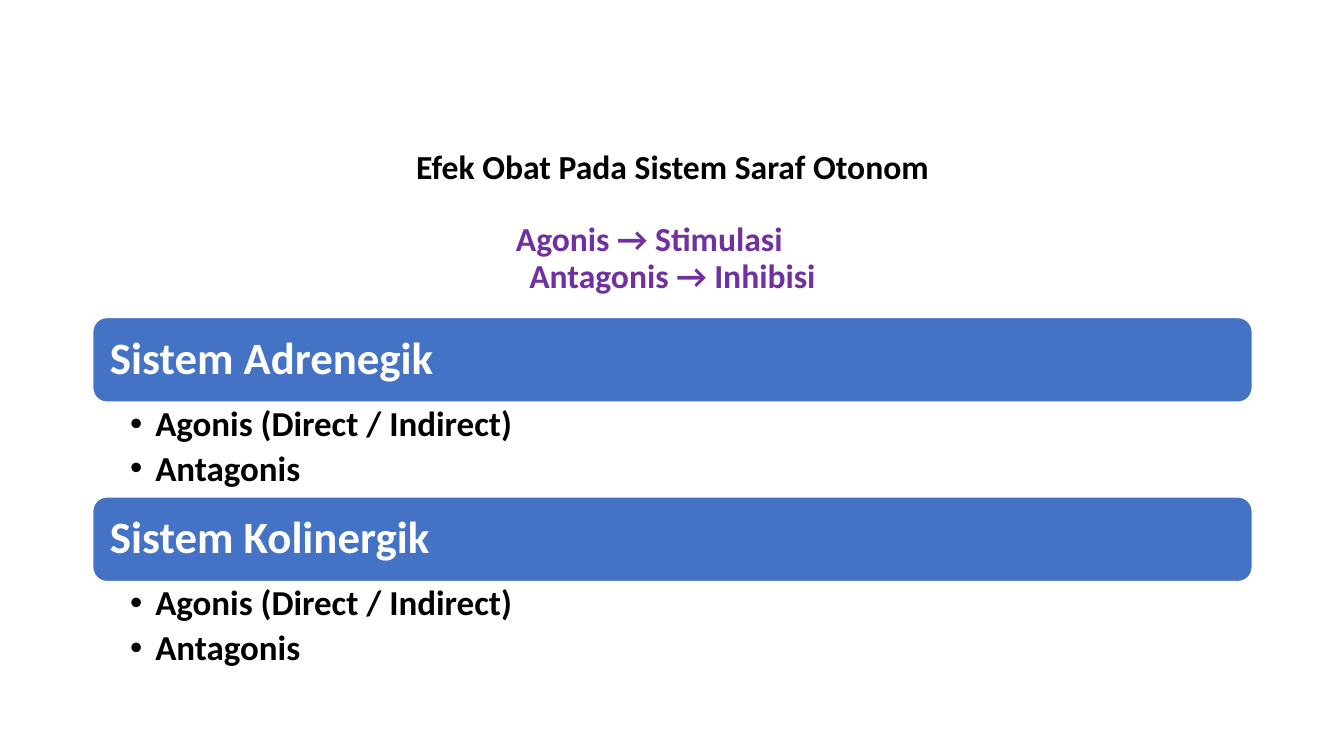
from dataclasses import dataclass

from lxml import etree
from pptx import Presentation
from pptx.dml.color import RGBColor
from pptx.enum.shapes import MSO_SHAPE
from pptx.enum.text import MSO_ANCHOR, MSO_AUTO_SIZE, PP_ALIGN
from pptx.oxml.ns import qn
from pptx.util import Inches, Pt

ROUNDED = MSO_SHAPE.ROUNDED_RECTANGLE
TOP, MIDDLE = MSO_ANCHOR.TOP, MSO_ANCHOR.MIDDLE
LEFT, CENTER = PP_ALIGN.LEFT, PP_ALIGN.CENTER
NO_FIT = MSO_AUTO_SIZE.NONE

BLACK = RGBColor(0x00, 0x00, 0x00)
WHITE = RGBColor(0xFF, 0xFF, 0xFF)
PURPLE = RGBColor(0x70, 0x30, 0xA0)
BLUE = RGBColor(0x44, 0x72, 0xC4)

MARGIN, WIDTH = 0.92, 11.5
FIRST_TOP, BAR_HEIGHT, LIST_HEIGHT = 3.15, 0.84, 0.94
AGONIST_SHIFT = 0.46


@dataclass
class DrugSystem:
    name: str
    effects: tuple[str, ...]


@dataclass
class TitleLine:
    text: str
    color: RGBColor
    indent: float = AGONIST_SHIFT
    before: float = 0


EFFECTS = ("Agonis (Direct / Indirect)", "Antagonis")
SYSTEMS = (
    DrugSystem("Sistem Adrenegik", EFFECTS),
    DrugSystem("Sistem Kolinergik", EFFECTS),
)
TITLE_LINES = (
    TitleLine("Efek Obat Pada Sistem Saraf Otonom", BLACK),
    TitleLine("Agonis → Stimulasi", PURPLE, indent=0, before=26),
    TitleLine("Antagonis → Inhibisi", PURPLE),
)


def place(sp, top: float, height: float) -> None:
    sp.left, sp.top = Inches(MARGIN), Inches(top)
    sp.width, sp.height = Inches(WIDTH), Inches(height)


def set_frame(tf, anchor, left: float, top: float, right: float, bottom: float) -> None:
    tf.word_wrap = True
    tf.auto_size = NO_FIT
    tf.vertical_anchor = anchor
    tf.margin_left, tf.margin_right = Inches(left), Inches(right)
    tf.margin_top, tf.margin_bottom = Inches(top), Inches(bottom)


def add_text(tf, text: str, *, size: float, color: RGBColor, align=LEFT, first: bool = True,
             before: float = 0, after: float = 0, indent: float = 0, bullet: str = "") -> None:
    p = tf.paragraphs[0] if first else tf.add_paragraph()
    pPr = p._p.get_or_add_pPr()
    pPr.set("marL", str(Inches(indent)))
    pPr.set("indent", str(-Inches(indent) if bullet else 0))
    if bullet:
        etree.SubElement(pPr, qn("a:buFont"), typeface="Arial")
        etree.SubElement(pPr, qn("a:buChar"), char=bullet)
    p.alignment = align
    p.line_spacing = 0.9
    p.space_before, p.space_after = Pt(before), Pt(after)
    r = p.add_run()
    r.text = text
    r.font.name, r.font.size, r.font.bold = "Calibri", Pt(size), True
    r.font.color.rgb = color


def add_title(sp) -> None:
    place(sp, 1.51, 1.4)
    tf = sp.text_frame
    set_frame(tf, MIDDLE, 0.1, 0.05, 0.1 + AGONIST_SHIFT, 0.05)
    for i, line in enumerate(TITLE_LINES):
        add_text(tf, line.text, size=24, color=line.color, align=CENTER,
                 first=i == 0, before=line.before, indent=line.indent)


def add_bar(s, name: str, top: float) -> None:
    sp = s.shapes.add_shape(ROUNDED, 0, 0, 0, 0)
    place(sp, top, BAR_HEIGHT)
    sp.shadow.inherit = False
    sp.fill.solid()
    sp.fill.fore_color.rgb = BLUE
    sp.line.color.rgb = WHITE
    sp.line.width = Pt(1)
    set_frame(sp.text_frame, MIDDLE, 0.13, 0.13, 0.13, 0.13)
    add_text(sp.text_frame, name, size=32, color=WHITE)


def add_effects(sp, effects: tuple[str, ...], top: float) -> None:
    place(sp, top, LIST_HEIGHT)
    tf = sp.text_frame
    set_frame(tf, TOP, 0.37, 0.04, 0.25, 0.04)
    for i, effect in enumerate(effects):
        add_text(tf, effect, size=25, color=BLACK, first=i == 0,
                 after=5, indent=0.25, bullet="•")


def main() -> None:
    prs = Presentation()
    prs.slide_width, prs.slide_height = Inches(13.33), Inches(7.5)
    s = prs.slides.add_slide(prs.slide_layouts[3])
    add_title(s.shapes.title)
    for i, system in enumerate(SYSTEMS):
        top = FIRST_TOP + i * (BAR_HEIGHT + LIST_HEIGHT)
        add_bar(s, system.name, top)
        add_effects(s.placeholders[i + 1], system.effects, top + BAR_HEIGHT)
    for sp in list(s.placeholders):
        if not sp.text_frame.text:
            sp._element.getparent().remove(sp._element)
    prs.save("out.pptx")


if __name__ == "__main__":
    main()
